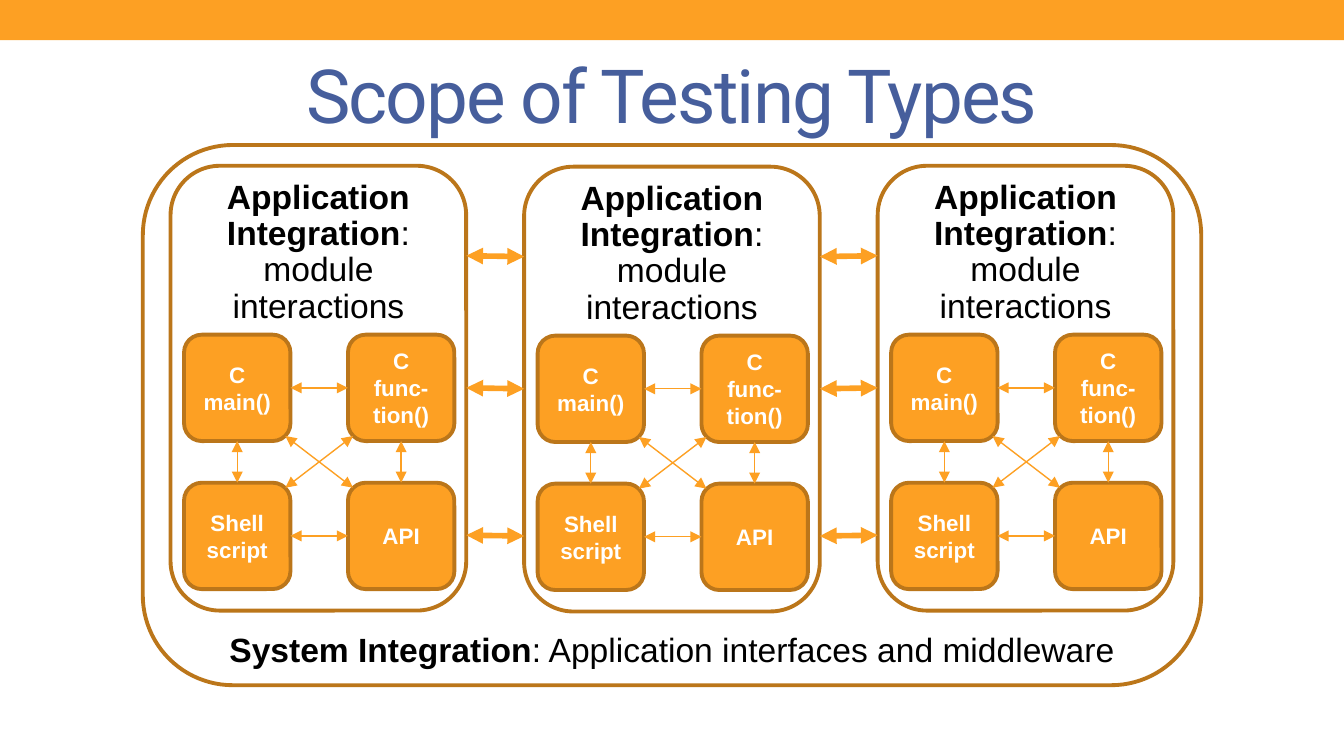
from dataclasses import dataclass

from lxml import etree
from pptx import Presentation
from pptx import util as u
from pptx.dml.color import RGBColor
from pptx.enum import shapes, text
from pptx.oxml.ns import qn


@dataclass(frozen=True)
class Theme:
    orange: RGBColor = RGBColor(0xFD, 0xA0, 0x23)
    brown: RGBColor = RGBColor(0xBB, 0x76, 0x1A)
    blue: RGBColor = RGBColor(0x46, 0x5E, 0x9C)
    black: RGBColor = RGBColor(0, 0, 0)
    white: RGBColor = RGBColor(0xFF, 0xFF, 0xFF)
    title_font: str = "Roboto"
    body_font: str = "Arial"
    title_size: float = 40
    body_size: float = 18
    box_size: float = 12
    border: float = 2.08
    thin: float = 0.75
    thick: float = 3


class Deck:
    """Holds the theme, the slide and the container now being filled."""

    def __init__(self, prs, theme):
        self.theme = theme
        self.s = prs.slides.add_slide(prs.slide_layouts[6])
        self.target = self.s.shapes

    def start_group(self):
        self.target = self.s.shapes.add_group_shape().shapes

    def end_group(self):
        self.target = self.s.shapes

    def shape(self, kind, x, y, w, h, fill=None, line=None):
        sp = self.target.add_shape(kind, u.Pt(x), u.Pt(y), u.Pt(w), u.Pt(h))
        sp.shadow.inherit = False
        if fill is None:
            sp.fill.background()
        else:
            sp.fill.solid()
            sp.fill.fore_color.rgb = fill
        if line is None:
            sp.line.fill.background()
        else:
            sp.line.color.rgb = line
            sp.line.width = u.Pt(self.theme.border)
        return sp

    def frame(self, x, y, w, h):
        return self.shape(shapes.MSO_SHAPE.ROUNDED_RECTANGLE, x, y, w, h, line=self.theme.brown)

    def style(self, p, size, color, font):
        p.alignment = text.PP_ALIGN.CENTER
        p.font.size = u.Pt(size)
        p.font.name = font
        p.font.color.rgb = color

    def box(self, label, x, y, size):
        t = self.theme
        sp = self.shape(shapes.MSO_SHAPE.ROUNDED_RECTANGLE, x, y, size, size, t.orange, t.brown)
        tf = sp.text_frame
        tf.word_wrap = True
        tf.vertical_anchor = text.MSO_ANCHOR.MIDDLE
        p = tf.paragraphs[0]
        p.text = label
        self.style(p, t.box_size, t.white, t.body_font)
        p.font.bold = True

    def text_box(self, x, y, w, h):
        tf = self.target.add_textbox(u.Pt(x), u.Pt(y), u.Pt(w), u.Pt(h)).text_frame
        tf.word_wrap = True
        return tf

    def title(self, label, x, y, w, h):
        t = self.theme
        tf = self.text_box(x, y, w, h)
        tf.vertical_anchor = text.MSO_ANCHOR.MIDDLE
        p = tf.paragraphs[0]
        self.style(p, t.title_size, t.blue, t.title_font)
        r = p.add_run()
        r.text = label
        r._r.get_or_add_rPr().set("spc", "-100")

    def caption(self, term, meaning, x, y, w, h, spacing=1.0):
        t = self.theme
        tf = self.text_box(x, y, w, h)
        tf.auto_size = text.MSO_AUTO_SIZE.SHAPE_TO_FIT_TEXT
        p = tf.paragraphs[0]
        self.style(p, t.body_size, t.black, t.body_font)
        p.line_spacing = spacing
        for part, bold in ((term, True), (meaning, False)):
            for i, piece in enumerate(part.split("\n")):
                if i:
                    p.add_line_break()
                r = p.add_run()
                r.text = piece
                r.font.bold = bold

    def arrow(self, x1, y1, x2, y2, width):
        c = self.target.add_connector(
            shapes.MSO_CONNECTOR.STRAIGHT, u.Pt(x1), u.Pt(y1), u.Pt(x2), u.Pt(y2))
        c.line.color.rgb = self.theme.orange
        c.line.width = u.Pt(width)
        ln = c.line._get_or_add_ln()
        for end in ("a:headEnd", "a:tailEnd"):
            etree.SubElement(ln, qn(end), type="triangle")
        etree.SubElement(c._element.spPr, qn("a:effectLst"))


# Application frames, and the grid of modules inside each
APP_W, APP_H = 158.4, 238.3
APP_X, APP_PITCH = 91.4, 189.4
APP_TOPS = (88.8, 89.3, 88.8)
BOX = 57
BOX_DX, BOX_DY = 7.2, 90.5
COL, ROW = 87.8, 79.3
CORNER = 2.7
MODULES = (("C\vmain()", "C\vfunc-tion()"), ("Shell script", "API"))


def application(deck, x, y):
    thin = deck.theme.thin
    left, top = x + BOX_DX, y + BOX_DY
    right, bottom = left + COL, top + ROW
    mid = BOX / 2
    deck.start_group()
    # Modules and heading
    for row, labels in enumerate(MODULES):
        for col, label in enumerate(labels):
            deck.box(label, left + col * COL, top + row * ROW, BOX)
    deck.caption("Application\nIntegration", ":\nmodule interactions",
                 x + 8.4, y + 4.2, 141.6, 85.7, spacing=0.9)
    # Links along the rows, the columns and the diagonals
    for row_y in (top, bottom):
        deck.arrow(left + BOX, row_y + mid, right, row_y + mid, thin)
    for col_x in (left, right):
        deck.arrow(col_x + mid, top + BOX, col_x + mid, bottom, thin)
    x1, x2 = left + BOX - CORNER, right + CORNER
    y1, y2 = top + BOX - CORNER, bottom + CORNER
    deck.arrow(x1, y1, x2, y2, thin)
    deck.arrow(x1, y2, x2, y1, thin)
    deck.frame(x, y, APP_W, APP_H)
    deck.end_group()


def main():
    prs = Presentation()
    prs.slide_width, prs.slide_height = u.Pt(720), u.Pt(405)
    theme = Theme()
    deck = Deck(prs, theme)

    # Top band and title
    deck.shape(shapes.MSO_SHAPE.RECTANGLE, 0, 0, 720, 21.6, fill=theme.orange)
    deck.title("Scope of Testing Types", 36, 20.9, 648, 58.3)

    # Applications
    for i, y in enumerate(APP_TOPS):
        application(deck, APP_X + i * APP_PITCH, y)

    # Links between neighbouring applications
    for dy in (48.2, BOX_DY + BOX / 2, BOX_DY + ROW + BOX / 2 - 0.4):
        for i in range(len(APP_TOPS) - 1):
            x = APP_X + i * APP_PITCH
            deck.arrow(x + APP_W, APP_TOPS[i] + dy,
                       x + APP_PITCH, APP_TOPS[i + 1] + dy, theme.thick)

    # System frame
    deck.frame(76.5, 77.7, 567, 289.4)
    deck.caption("System Integration", ": Application interfaces and middleware",
                 91.4, 333.5, 537.2, 29.1)

    prs.save("out.pptx")


if __name__ == "__main__":
    main()
